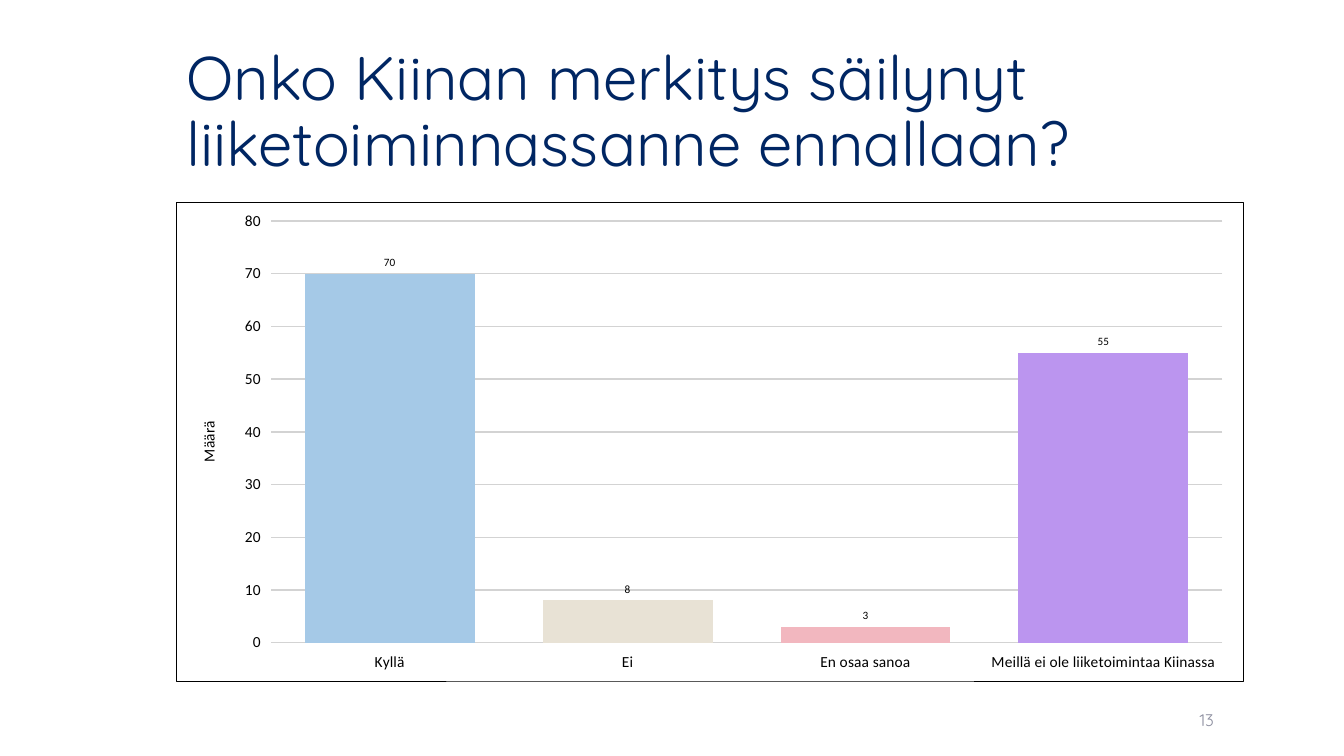
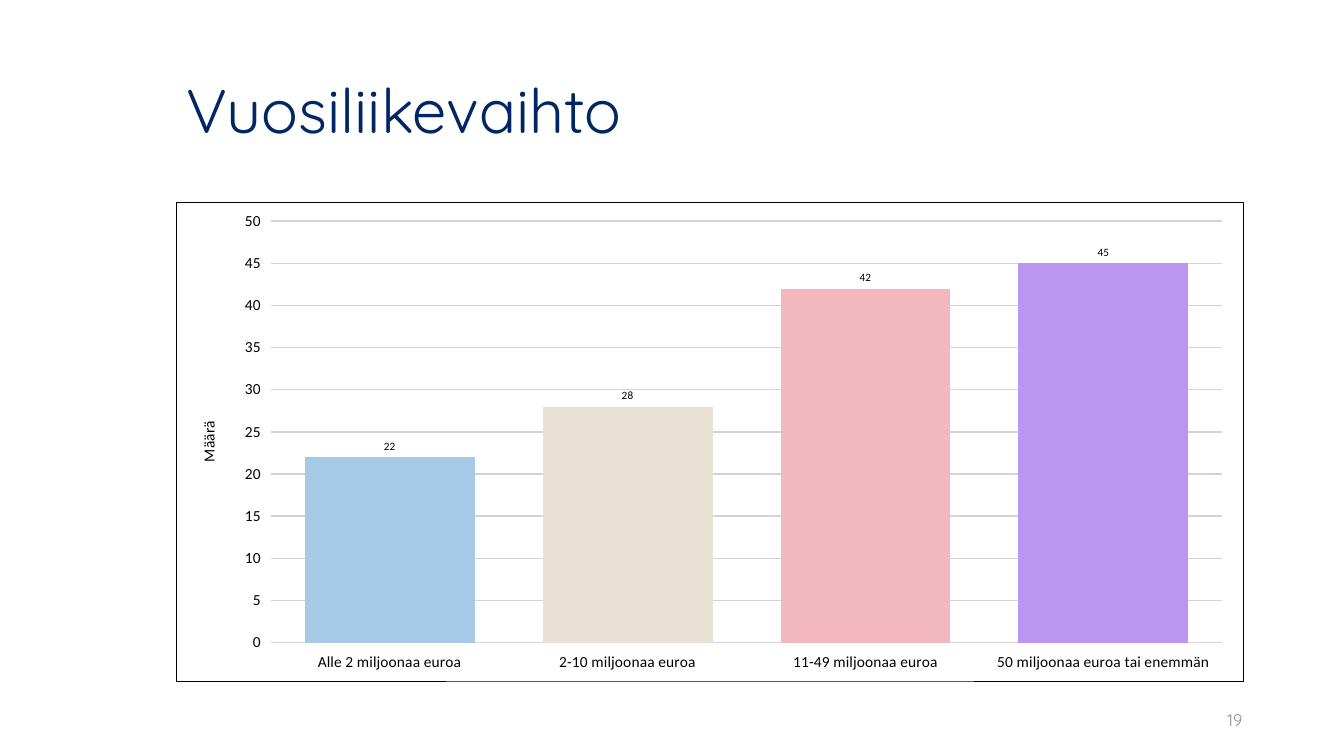
"""Build two survey slides, each with a title, a column chart and a page number."""
import pptx
import pptx.chart.data
import pptx.dml.color
import pptx.enum.chart
import pptx.enum.text
import pptx.oxml
import pptx.oxml.ns
import pptx.util

Inches = pptx.util.Inches
Pt = pptx.util.Pt
RGBColor = pptx.dml.color.RGBColor
Align = pptx.enum.text.PP_ALIGN

NAVY = RGBColor(0x00, 0x26, 0x63)
GREY = RGBColor(0x8C, 0x8E, 0x9F)
GRID = RGBColor(0xD3, 0xD3, 0xD3)
BLACK = RGBColor(0, 0, 0)
BARS = [
    RGBColor(0xA5, 0xC9, 0xE7),
    RGBColor(0xE8, 0xE2, 0xD5),
    RGBColor(0xF2, 0xB7, 0xBF),
    RGBColor(0xBB, 0x95, 0xEF),
]
HEAD = "Quicksand"
BODY = "Calibri"
LEFT, WIDTH = 1.75, 10.59

PAGES = [
    ("Onko Kiinan merkitys säilynyt liiketoiminnassanne ennallaan?", "13", 0.38,
     {"Kyllä": 70, "Ei": 8, "En osaa sanoa": 3,
      "Meillä ei ole liiketoimintaa Kiinassa": 55}),
    ("Vuosiliikevaihto", "19", 0.1,
     {"Alle 2 miljoonaa euroa": 22, "2-10 miljoonaa euroa": 28,
      "11-49 miljoonaa euroa": 42, "50 miljoonaa euroa tai enemmän": 45}),
]

BORDER = (
    f"<c:spPr {pptx.oxml.ns.nsdecls('c', 'a')}>"
    '<a:solidFill><a:srgbClr val="FFFFFF"/></a:solidFill>'
    '<a:ln w="6350"><a:solidFill><a:srgbClr val="000000"/></a:solidFill></a:ln>'
    "</c:spPr>"
)
LAYOUT = (
    f"<c:layout {pptx.oxml.ns.nsdecls('c')}><c:manualLayout>"
    '<c:layoutTarget val="inner"/><c:xMode val="edge"/><c:yMode val="edge"/>'
    '<c:x val="0.088"/><c:y val="0.04"/><c:w val="0.892"/><c:h val="0.88"/>'
    "</c:manualLayout></c:layout>"
)


def style(font, name, size, color):
    """Set the face, size and colour of a font."""
    font.name = name
    font.size = Pt(size)
    font.color.rgb = color
    font.bold = False


def add_text(slide, box, text, size, color, align=Align.LEFT, inset=0.1):
    """Add one paragraph, centred in height."""
    frame = slide.shapes.add_textbox(*map(Inches, box)).text_frame
    frame.word_wrap = True
    frame.vertical_anchor = pptx.enum.text.MSO_ANCHOR.MIDDLE
    frame.margin_right = Inches(inset)
    frame.text = text
    line = frame.paragraphs[0]
    line.alignment = align
    line.line_spacing = 0.9
    style(line.runs[0].font, HEAD, size, color)


def set_axes(chart):
    """Style both axes, the grid and the axis title."""
    for axis in (chart.category_axis, chart.value_axis):
        axis.format.line.fill.background()
        style(axis.tick_labels.font, BODY, 11, BLACK)
    axis = chart.value_axis
    axis.minimum_scale = 0
    grid = axis.major_gridlines.format.line
    grid.color.rgb = GRID
    grid.width = Pt(1)
    frame = axis.axis_title.text_frame
    frame.text = "Määrä"
    style(frame.paragraphs[0].runs[0].font, BODY, 11, BLACK)


def set_frame(chart):
    """Give the chart its border and fix the plot area."""
    root = chart.element
    root.find(pptx.oxml.ns.qn("c:chart")).addnext(pptx.oxml.parse_xml(BORDER))
    plot = root.find(".//" + pptx.oxml.ns.qn("c:plotArea"))
    for old in plot.findall(pptx.oxml.ns.qn("c:layout")):
        plot.remove(old)
    plot.insert(0, pptx.oxml.parse_xml(LAYOUT))


def add_bars(slide, counts):
    """Add the column chart with one colour for each answer."""
    data = pptx.chart.data.CategoryChartData()
    data.categories = list(counts)
    data.add_series("Series 1", list(counts.values()))
    kind = pptx.enum.chart.XL_CHART_TYPE.COLUMN_CLUSTERED
    box = map(Inches, (LEFT, 2, WIDTH, 4.76))
    chart = slide.shapes.add_chart(kind, *box, data).chart
    chart.has_legend = False
    chart.has_title = False
    style(chart.font, BODY, 11, BLACK)
    plot = chart.plots[0]
    plot.vary_by_categories = False
    plot.gap_width = 40
    plot.overlap = -2
    plot.has_data_labels = True
    labels = plot.data_labels
    labels.show_value = True
    labels.number_format = "0"
    labels.number_format_is_linked = False
    labels.position = pptx.enum.chart.XL_LABEL_POSITION.OUTSIDE_END
    style(labels.font, BODY, 8, BLACK)
    for spot, color in enumerate(BARS):
        fill = plot.series[0].points[spot].format.fill
        fill.solid()
        fill.fore_color.rgb = color
    set_axes(chart)
    set_frame(chart)


def main():
    """Build and save the deck."""
    deck = pptx.Presentation()
    deck.slide_width = Inches(13.33)
    deck.slide_height = Inches(7.5)
    for title, page, inset, counts in PAGES:
        slide = deck.slides.add_slide(deck.slide_layouts[6])
        add_text(slide, (LEFT, 0.4, WIDTH, 1.45), title, 44, NAVY)
        add_text(slide, (9.42, 6.95, 3, 0.4), page, 12, GREY, Align.RIGHT, inset)
        add_bars(slide, counts)
    deck.save("out.pptx")


if __name__ == "__main__":
    main()
